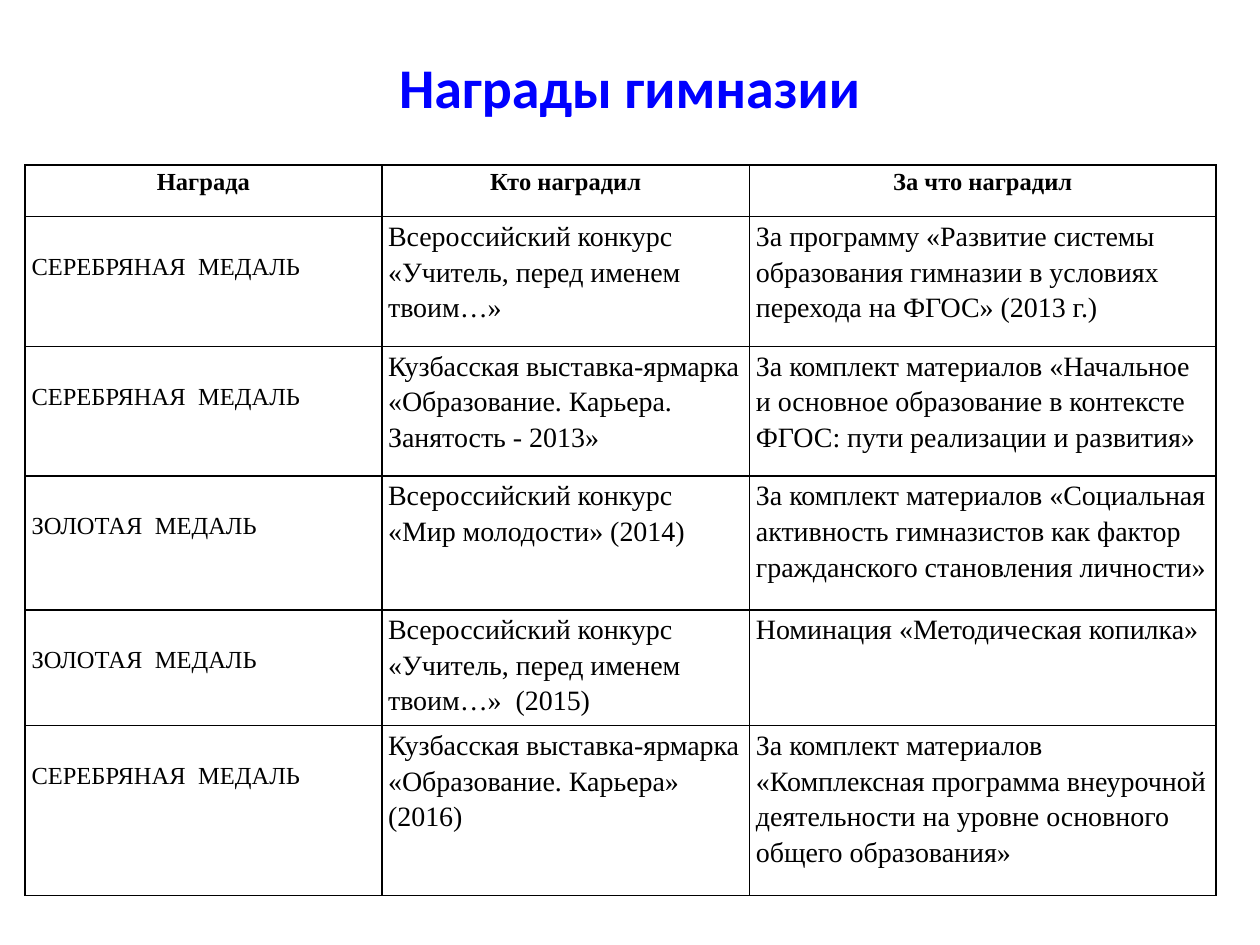
from lxml.etree import SubElement
from pptx import Presentation
from pptx.dml.color import RGBColor
from pptx.enum.text import MSO_ANCHOR, PP_ALIGN
from pptx.oxml.ns import qn
from pptx.util import Inches, Pt

COLORS = {"title": "0000FF", "text": "000000", "border": "000000"}
TITLE = {"name": "Calibri", "size": Pt(32), "bold": True}
HEADER = {"name": "Times New Roman", "size": Pt(14), "bold": True}
MEDAL = {**HEADER, "bold": False}
BODY = {**MEDAL, "size": Pt(16)}

COL_WIDTHS = [2.83, 2.92, 3.7]
ROW_HEIGHTS = [0.41, 1.03, 1.03, 1.06, 0.85, 1.35]
MEDAL_TOP = 0.26

ROWS = [
    ("Награда", "Кто наградил", "За что наградил"),
    ("СЕРЕБРЯНАЯ  МЕДАЛЬ",
     "Всероссийский конкурс «Учитель, перед именем твоим…»",
     "За программу «Развитие системы образования гимназии в условиях "
     "перехода на ФГОС» (2013 г.)"),
    ("СЕРЕБРЯНАЯ  МЕДАЛЬ",
     "Кузбасская выставка-ярмарка «Образование. Карьера. Занятость - 2013»",
     "За комплект материалов «Начальное и основное образование в контексте "
     "ФГОС: пути реализации и развития»"),
    ("ЗОЛОТАЯ  МЕДАЛЬ",
     "Всероссийский конкурс «Мир молодости» (2014)",
     "За комплект материалов «Социальная активность гимназистов как фактор "
     "гражданского становления личности»"),
    ("ЗОЛОТАЯ  МЕДАЛЬ",
     "Всероссийский конкурс «Учитель, перед именем твоим…»  (2015)",
     "Номинация «Методическая копилка»"),
    ("СЕРЕБРЯНАЯ  МЕДАЛЬ",
     "Кузбасская выставка-ярмарка «Образование. Карьера»\n(2016)",
     "За комплект материалов «Комплексная программа внеурочной деятельности "
     "на уровне основного общего образования»"),
]


def write(tf, text, font, color, align, spacing=1.0):
    tf.text = text
    for p in tf.paragraphs:
        p.alignment = align
        p.line_spacing = spacing
        for r in p.runs:
            for name, value in font.items():
                setattr(r.font, name, value)
            r.font.color.rgb = RGBColor.from_string(COLORS[color])


def add_borders(cell):
    tcPr = cell._tc.get_or_add_tcPr()
    for side in ("lnL", "lnR", "lnT", "lnB"):
        ln = SubElement(tcPr, qn(f"a:{side}"), w=str(Pt(1)))
        fill = SubElement(ln, qn("a:solidFill"))
        SubElement(fill, qn("a:srgbClr"), val=COLORS["border"])


prs = Presentation()
prs.slide_width, prs.slide_height = Inches(10), Inches(7.5)
s = prs.slides.add_slide(prs.slide_layouts[6])

title = s.shapes.add_textbox(Inches(0.5), Inches(0.3), Inches(9), Inches(0.77))
tf = title.text_frame
tf.word_wrap = True
tf.vertical_anchor = MSO_ANCHOR.MIDDLE
write(tf, "Награды гимназии", TITLE, "title", PP_ALIGN.CENTER)

table = s.shapes.add_table(
    len(ROWS), len(COL_WIDTHS), Inches(0.2), Inches(1.31),
    Inches(sum(COL_WIDTHS)), Inches(sum(ROW_HEIGHTS))).table
for column, width in zip(table.columns, COL_WIDTHS):
    column.width = Inches(width)
for row, height in zip(table.rows, ROW_HEIGHTS):
    row.height = Inches(height)

for i, texts in enumerate(ROWS):
    for j, text in enumerate(texts):
        cell = table.cell(i, j)
        is_medal = i > 0 and j == 0
        cell.margin_left = cell.margin_right = Inches(0.05)
        cell.margin_top = Inches(MEDAL_TOP if is_medal else 0)
        cell.margin_bottom = Inches(0)
        add_borders(cell)
        cell.fill.background()
        font = HEADER if i == 0 else MEDAL if is_medal else BODY
        align = PP_ALIGN.CENTER if i == 0 else PP_ALIGN.LEFT
        write(cell.text_frame, text, font, "text", align, 1.15)

prs.save("out.pptx")
